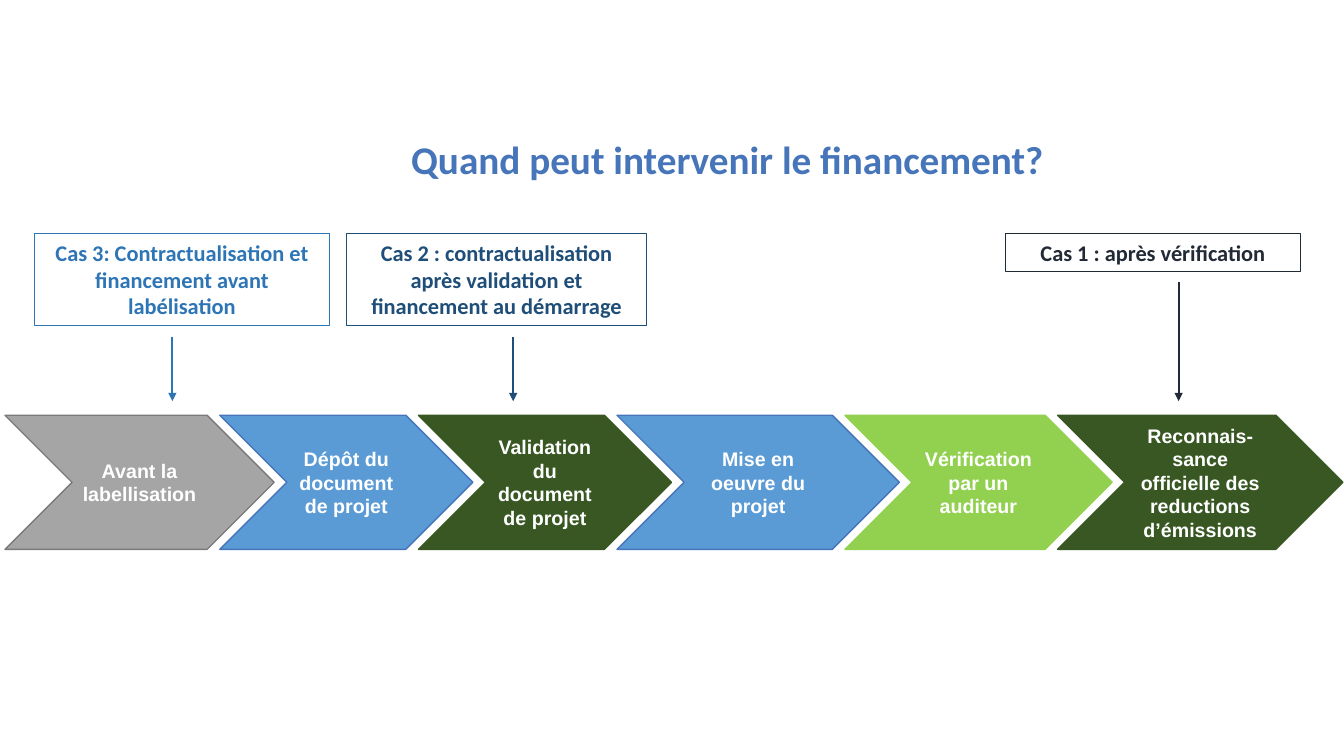
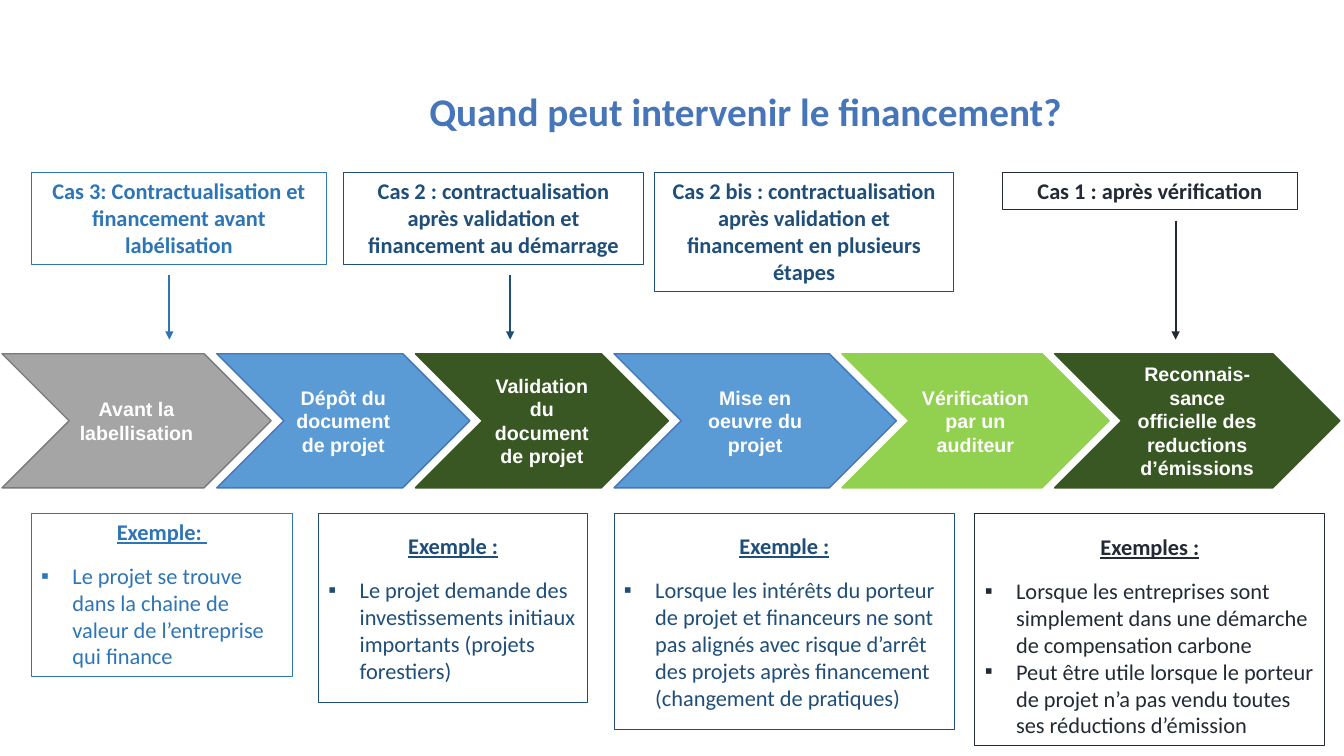
from dataclasses import dataclass

from lxml import etree
from pptx import Presentation
from pptx.dml.color import RGBColor
from pptx.enum.shapes import MSO_CONNECTOR as Conn, MSO_SHAPE as Shape
from pptx.enum.text import MSO_ANCHOR as Anchor, MSO_AUTO_SIZE as AutoSize, PP_ALIGN as Align
from pptx.oxml.ns import qn
from pptx.util import Inches, Pt


@dataclass(frozen=True)
class Theme:
    white: str = "FFFFFF"
    title: str = "4675B9"
    before: str = "2E75B6"
    start: str = "1F4E79"
    after: str = "222A35"
    grey: str = "A5A5A5"
    grey_edge: str = "7A7A7A"
    blue: str = "5B9BD5"
    dark_green: str = "385723"
    light_green: str = "92D050"
    body_font: str = "Calibri"
    step_font: str = "Arial"
    title_size: float = 28
    body_size: float = 16
    step_size: float = 14
    bullet_gap: float = 12.2
    bullet_indent: float = 0.31
    thin: float = 0.75
    edge: float = 1
    arrow: float = 1.5


T = Theme()

STEPS = [
    ("Avant la labellisation", 2.67, T.grey, T.grey_edge),
    ("Dépôt du document de projet", 2.51, T.blue, T.title),
    ("Validation du document de projet", 2.51, T.dark_green, T.dark_green),
    ("Mise en oeuvre du projet", 2.8, T.blue, T.title),
    ("Vérification par un auditeur", 2.65, T.light_green, T.light_green),
    ("Reconnais-sance officielle des reductions d’émissions", 2.83, T.dark_green, T.dark_green),
]
STEP_LEFT, STEP_TOP, STEP_HEIGHT, STEP_OVERLAP = 0.05, 4.12, 1.33, 0.54

CASES = [
    ("Cas 3: Contractualisation et financement avant labélisation", 0.34, 2.93, 0.91, T.before, 1.71),
    ("Cas 2 : contractualisation après validation et financement au démarrage",
     3.44, 2.97, 0.91, T.start, 5.09),
    ("Cas 1 : après vérification", 9.97, 2.93, 0.37, T.after, 11.69),
]
CASE_BIS = ("Cas 2 bis : contractualisation après validation et financement en plusieurs étapes",
            6.52, 2.97, 1.18, T.start, None)
CASE_TOP, ARROW_GAP, ARROW_END = 2.32, 0.11, 3.98

EXAMPLES = [
    ("Exemple: ", 0.31, 2.59, 1.62, 0.05, T.before,
     ["Le projet se trouve dans la chaine de valeur de l’entreprise qui finance"]),
    ("Exemple :", 3.16, 2.67, 1.88, 0.19, T.start,
     ["Le projet demande des investissements initiaux importants (projets forestiers)"]),
    ("Exemple :", 6.09, 3.38, 2.15, 0.19, T.start,
     ["Lorsque les intérêts du porteur de projet et financeurs ne sont pas alignés avec risque "
      "d’arrêt des projets après financement (changement de pratiques)"]),
    ("Exemples :", 9.67, 3.47, 2.31, 0.2, T.after,
     ["Lorsque les entreprises sont simplement dans une démarche de compensation carbone",
      "Peut être utile lorsque le porteur de projet n’a pas vendu toutes ses réductions d’émission"]),
]
EXAMPLE_TOP = 5.09


class Deck:
    def __init__(self):
        self.prs = Presentation()
        self.prs.slide_width = Inches(13.33)
        self.prs.slide_height = Inches(7.5)

    def new_slide(self, dx=0, dy=0):
        self.s = self.prs.slides.add_slide(self.prs.slide_layouts[6])
        self.dx, self.dy = dx, dy

    def shape(self, kind, x, y, w, h, fill=None, line=None, width=T.thin):
        sp = self.s.shapes.add_shape(kind, Inches(x), Inches(y), Inches(w), Inches(h))
        sp.shadow.inherit = False
        if fill:
            sp.fill.solid()
            sp.fill.fore_color.rgb = RGBColor.from_string(fill)
        else:
            sp.fill.background()
        if line:
            sp.line.color.rgb = RGBColor.from_string(line)
            sp.line.width = Pt(width)
        else:
            sp.line.fill.background()
        tf = sp.text_frame
        tf.word_wrap = True
        tf.vertical_anchor = Anchor.TOP
        return tf

    def run(self, p, text, color, size=T.body_size, font=T.body_font, bold=True, underline=False,
            align=Align.CENTER):
        p.alignment = align
        r = p.add_run()
        r.text = text
        r.font.name = font
        r.font.size = Pt(size)
        r.font.bold = bold
        r.font.underline = underline
        r.font.color.rgb = RGBColor.from_string(color)

    def title(self, text, x, y):
        tf = self.shape(Shape.RECTANGLE, x, y, 6.64, 0.57, fill=T.white)
        tf.word_wrap = False
        tf.auto_size = AutoSize.SHAPE_TO_FIT_TEXT
        self.run(tf.paragraphs[0], text, T.title, T.title_size, align=Align.LEFT)

    def step(self, text, x, w, fill, line):
        tf = self.shape(Shape.CHEVRON, x + self.dx, STEP_TOP + self.dy, w, STEP_HEIGHT,
                        fill, line, T.edge)
        tf.vertical_anchor = Anchor.MIDDLE
        self.run(tf.paragraphs[0], text, T.white, T.step_size, T.step_font)

    def arrow(self, x, top, bottom, color):
        x = Inches(x + self.dx)
        cn = self.s.shapes.add_connector(Conn.STRAIGHT, x, Inches(top + self.dy),
                                         x, Inches(bottom + self.dy))
        cn.line.color.rgb = RGBColor.from_string(color)
        cn.line.width = Pt(T.arrow)
        etree.SubElement(cn.line._get_or_add_ln(), qn("a:tailEnd"), type="triangle")
        etree.SubElement(cn._element.spPr, qn("a:effectLst"))

    def case(self, text, x, w, h, color, arrow_x):
        tf = self.shape(Shape.RECTANGLE, x + self.dx, CASE_TOP + self.dy, w, h, line=color)
        tf.auto_size = AutoSize.SHAPE_TO_FIT_TEXT
        self.run(tf.paragraphs[0], text, color)
        if arrow_x:
            self.arrow(arrow_x, CASE_TOP + h + ARROW_GAP, ARROW_END, color)

    def example(self, heading, x, w, h, inset, color, points):
        tf = self.shape(Shape.RECTANGLE, x, EXAMPLE_TOP, w, h, T.white, color)
        tf.margin_top = Inches(inset)
        tf.auto_size = AutoSize.SHAPE_TO_FIT_TEXT
        self.run(tf.paragraphs[0], heading, color, underline=True)
        for i, text in enumerate(points):
            p = tf.add_paragraph()
            p.space_before = Pt(0 if i else T.bullet_gap)
            pPr = p._p.get_or_add_pPr()
            pPr.set("marL", str(Inches(T.bullet_indent)))
            pPr.set("indent", str(-Inches(T.bullet_indent)))
            etree.SubElement(pPr, qn("a:buFont"), typeface="Arial")
            etree.SubElement(pPr, qn("a:buChar"), char="▪")
            self.run(p, text, color, bold=False, align=Align.LEFT)

    def timeline(self, cases):
        x = STEP_LEFT
        for text, w, fill, line in STEPS:
            self.step(text, x, w, fill, line)
            x += w - STEP_OVERLAP
        for case in cases:
            self.case(*case)


def main():
    question = "Quand peut intervenir le financement?"
    deck = Deck()

    deck.new_slide()
    deck.timeline(CASES)
    deck.title(question, 3.98, 1.29)

    deck.new_slide(dx=-0.03, dy=-0.61)
    deck.timeline(CASES + [CASE_BIS])
    deck.title(question, 4.16, 0.82)
    for example in EXAMPLES:
        deck.example(*example)

    deck.prs.save("out.pptx")


if __name__ == "__main__":
    main()
